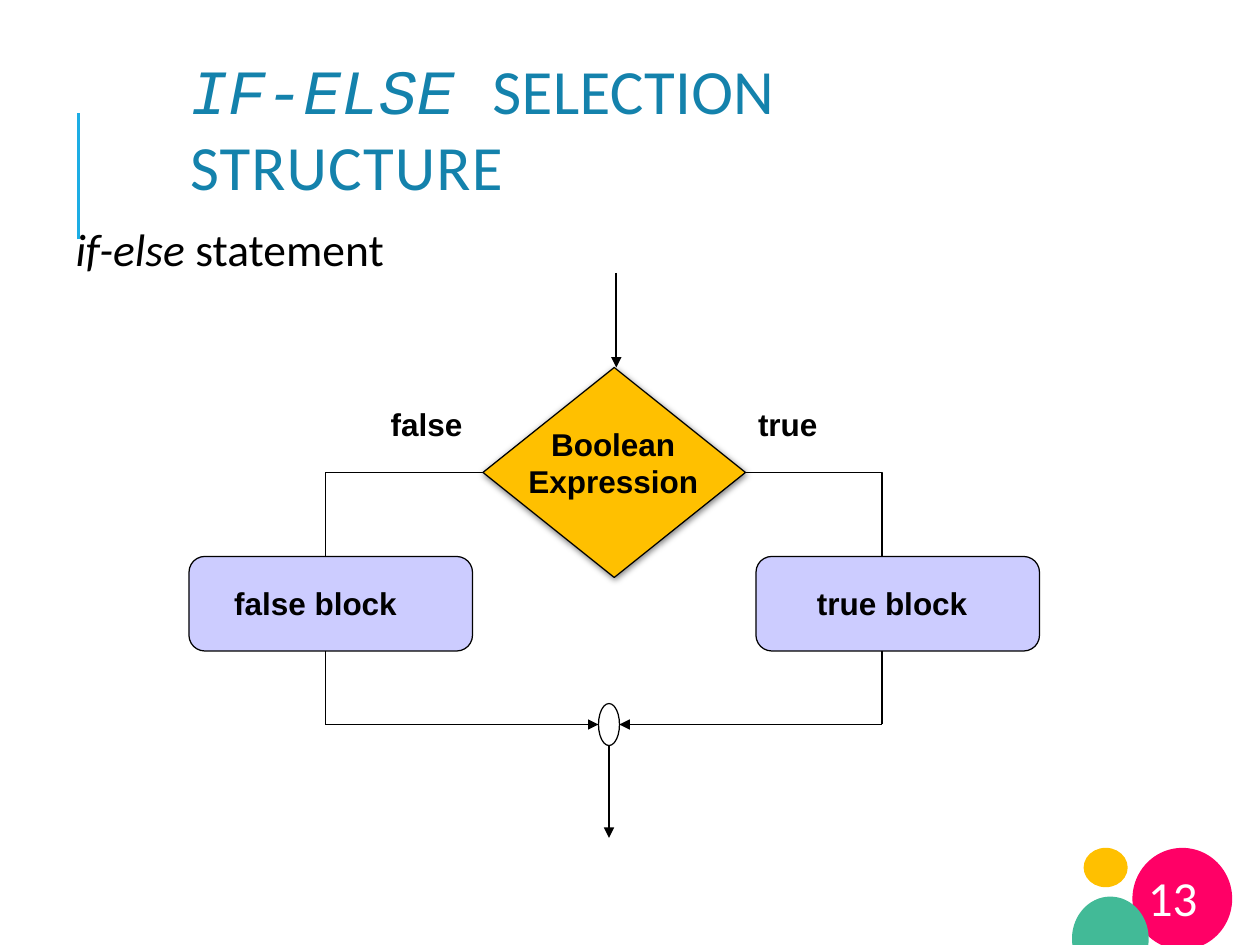
"""Build the if-else flowchart slide on a grid of 120 columns by 90 rows."""
import math

from lxml import etree
from pptx import Presentation
from pptx import util as u
from pptx.dml.color import RGBColor
from pptx.enum import shapes, text
from pptx.oxml.ns import qn

COLORS = {
    "black": "000000", "white": "FFFFFF", "title": "1482AC", "rule": "1CADE4",
    "amber": "FFC000", "pink": "FF0066", "green": "42BA97", "block": "CCCCFF",
}
RGB = {name: RGBColor.from_string(value) for name, value in COLORS.items()}

deck = Presentation()
deck.slide_width, deck.slide_height = u.Inches(10), u.Inches(7.5)
page = deck.slides.add_slide(deck.slide_layouts[6])
cell = deck.slide_width // 120


def grid(*lengths):
    return [round(length * cell) for length in lengths]


center_x, center_y, radius_x, radius_y = 105.75, 89.4, 3.65, 4
arc = [
    grid(center_x + radius_x * math.cos(math.radians(angle)),
         center_y - radius_y * math.sin(math.radians(angle)))
    for angle in range(-37, 218, 2)
]
body_builder = page.shapes.build_freeform(*arc[0])
body_builder.add_line_segments(arc[1:], close=True)

head = page.shapes.add_shape(shapes.MSO_SHAPE.OVAL, *grid(103.2, 80.75, 4.2, 3.75))
badge = page.shapes.add_shape(shapes.MSO_SHAPE.OVAL, *grid(107.85, 80.75, 9.5, 9.7))
body = body_builder.convert_to_shape()
for figure, color in ((head, "amber"), (badge, "pink"), (body, "green")):
    figure.shadow.inherit = False
    figure.fill.solid()
    figure.fill.fore_color.rgb = RGB[color]
    figure.line.fill.background()

for diamond_tip, column in ((46, 31), (71, 84)):
    builder = page.shapes.build_freeform(*grid(diamond_tip, 45))
    builder.add_line_segments([grid(column, 45), grid(column, 53)], close=False)
    builder.move_to(*grid(column, 62))
    builder.add_line_segments([grid(column, 69)], close=False)
    branch = builder.convert_to_shape()
    branch.shadow.inherit = False
    branch.fill.background()
    branch.line.color.rgb = RGB["black"]
    branch.line.width = u.Pt(0.72)

for ends, width, color in (
    ((7.5, 22.8, 7.5, 10.8), 1.5, "rule"),
    ((58.7, 26, 58.7, 35), 1.1, "black"),
    ((31, 69, 57, 69), 1.1, "black"),
    ((84, 69, 59, 69), 1.1, "black"),
    ((58, 71, 58, 79.8), 1.1, "black"),
):
    line = page.shapes.add_connector(shapes.MSO_CONNECTOR.STRAIGHT, *grid(*ends))
    line.line.color.rgb = RGB[color]
    line.line.width = u.Pt(width)
    if color == "black":
        etree.SubElement(line.line._get_or_add_ln(), qn("a:tailEnd"),
                         type="triangle", w="med", len="med")
    etree.SubElement(line._element.spPr, qn("a:effectLst"))

flow_nodes = (
    (shapes.MSO_SHAPE.DIAMOND, (46, 35, 25, 20), "amber"),
    (shapes.MSO_SHAPE.ROUNDED_RECTANGLE, (18, 53, 27, 9), "block"),
    (shapes.MSO_SHAPE.ROUNDED_RECTANGLE, (72, 53, 27, 9), "block"),
    (shapes.MSO_SHAPE.OVAL, (57, 67, 2, 4), None),
)
for kind, place, color in flow_nodes:
    node = page.shapes.add_shape(kind, *grid(*place))
    node.shadow.inherit = False
    if color:
        node.fill.solid()
        node.fill.fore_color.rgb = RGB[color]
    else:
        node.fill.background()
    node.line.color.rgb = RGB["black"]
    node.line.width = u.Pt(0.72)
    if kind == shapes.MSO_SHAPE.DIAMOND:
        effects = node._element.spPr.find(qn("a:effectLst"))
        shadow = etree.SubElement(effects, qn("a:outerShdw"), blurRad=str(u.Pt(4)),
                                  dist=str(u.Pt(1)), dir="5400000", rotWithShape="0")
        tint = etree.SubElement(shadow, qn("a:srgbClr"), val=COLORS["black"])
        etree.SubElement(tint, qn("a:alpha"), val="50000")


def add_text(place, lines, size, font="Arial", color="black", bold=False,
             align=text.PP_ALIGN.LEFT, anchor=text.MSO_ANCHOR.TOP):
    box = page.shapes.add_textbox(*grid(*place))
    frame = box.text_frame
    frame.word_wrap = True
    frame.vertical_anchor = anchor
    frame.margin_left = frame.margin_right = frame.margin_bottom = 0
    frame.margin_top = grid(0.15)[0] if anchor == text.MSO_ANCHOR.TOP else 0
    for index, line in enumerate(lines):
        para = frame.paragraphs[0] if index == 0 else frame.add_paragraph()
        para.alignment = align
        para.font.size = u.Pt(size)
        para.font.name = font
        para.font.bold = bold
        para.font.color.rgb = RGB[color]
        for wording in line:
            para.add_run().text = wording
    return frame.paragraphs[0]


title = add_text((18.1, 8.4, 73.1, 7.5), [["IF-ELSE ", "SELECTION ", "STRUCTURE"]], 36,
                 "Calibri", "title", anchor=text.MSO_ANCHOR.MIDDLE)
keyword, *remainder = title.runs
keyword.font.name = "Courier New"
keyword.font.italic = True
for span, spacing in zip(remainder, ("20", "65")):
    span._r.get_or_add_rPr().set("spc", spacing)

subtitle = add_text((7.2, 20.95, 29.8, 5.5), [["if-else ", "statement"]], 26, "Calibri")
subtitle.runs[0].font.italic = True

number = add_text((106.9, 84.9, 9.6, 3.6), [["13"]], 28, "Calibri", "white",
                  align=text.PP_ALIGN.CENTER, anchor=text.MSO_ANCHOR.MIDDLE)
number.line_spacing = u.Pt(18.1)

for place, wording in (
    ((37.2, 38.4, 7.2, 4), "false"),
    ((72.2, 38.4, 6, 4), "true"),
    ((22.3, 55.5, 15.9, 4), "false block"),
    ((77.8, 55.5, 14.7, 4), "true block"),
):
    add_text(place, [[wording]], 18, bold=True)
add_text((50.1, 40.3, 16.6, 7.5), [["Boolean"], ["Expression"]], 18, bold=True,
         align=text.PP_ALIGN.CENTER)

deck.save("out.pptx")
